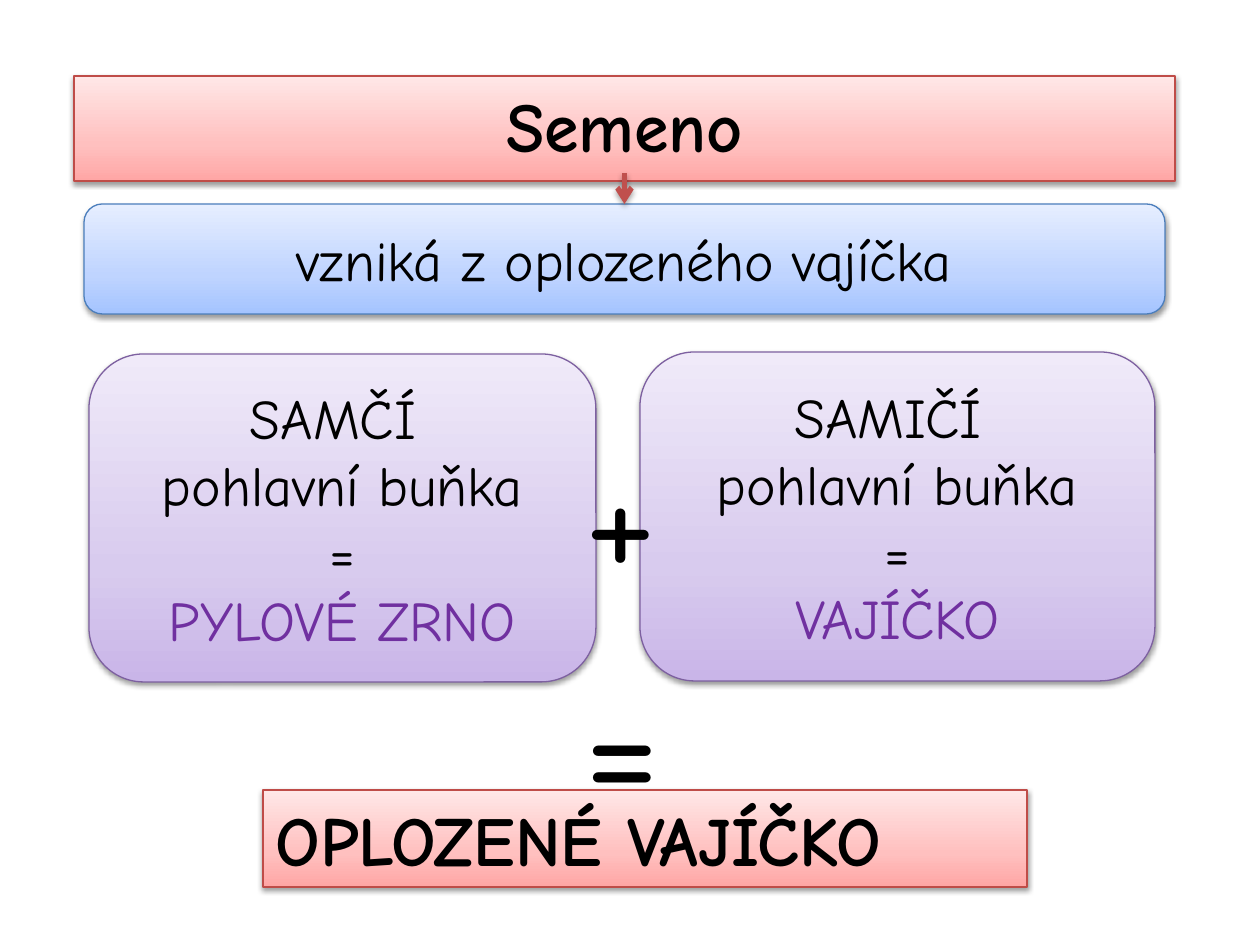
from dataclasses import dataclass

from copy import deepcopy
from lxml import etree
from pptx import Presentation
from pptx.dml.color import RGBColor
from pptx.enum.shapes import MSO_CONNECTOR, MSO_SHAPE
from pptx.enum.text import MSO_ANCHOR, MSO_AUTO_SIZE, PP_ALIGN
from pptx.oxml.ns import qn
from pptx.util import Emu, Pt

PX = 914400 // 126
RECT, ROUNDED = MSO_SHAPE.RECTANGLE, MSO_SHAPE.ROUNDED_RECTANGLE
STRAIGHT = MSO_CONNECTOR.STRAIGHT
TOP, MIDDLE = MSO_ANCHOR.TOP, MSO_ANCHOR.MIDDLE
LEFT, CENTER = PP_ALIGN.LEFT, PP_ALIGN.CENTER
GROW, FIXED = MSO_AUTO_SIZE.SHAPE_TO_FIT_TEXT, MSO_AUTO_SIZE.NONE
FONT = "Comic Neue"
BLACK, PURPLE, ARROW_RED = "000000", "7030A0", "C0504D"
STOP_POSITIONS = (0, 0.35, 1)
BOTTOM_SIDE, TOP_SIDE = 2, 0


@dataclass(frozen=True)
class Theme:
    stops: tuple[str, str, str]
    outline: str


@dataclass(frozen=True)
class Card:
    area: tuple[int, int, int, int]
    theme: Theme
    lines: tuple[str, ...]
    last_color: str = BLACK


RED = Theme(("FFA6A5", "FFC0BF", "FFE7E7"), "BF4C48")
BLUE = Theme(("A4C4FF", "BFD4FF", "E6EEFF"), "4B7EBC")
VIOLET = Theme(("C9B5E8", "D8CBEE", "F0EAF9"), "7D60A0")

TITLE_AREA = (74, 76, 1101, 97)
RESULT_AREA = (263, 790, 764, 97)
ORIGIN = Card((84, 204, 1081, 110), BLUE, ("vzniká z oplozeného vajíčka",))
CELLS = (
    Card((89, 354, 507, 328), VIOLET,
         ("SAMČÍ ", "pohlavní buňka", "=", "PYLOVÉ ZRNO"), PURPLE),
    Card((640, 352, 515, 329), VIOLET,
         ("SAMIČÍ ", "pohlavní buňka", "=", "VAJÍČKO"), PURPLE),
)
PLUS_AREA = (571, 402, 107, 217)
EQUALS_AREA = (571, 631, 112, 217)


def color(value: str) -> RGBColor:
    return RGBColor.from_string(value)


def emu(area: tuple[int, ...]) -> list[Emu]:
    return [Emu(length * PX) for length in area]


def set_format(target, values: dict) -> None:
    for name, value in values.items():
        setattr(target, name, value)


def add_shadow(shape, alpha: int, distance: int) -> None:
    properties = shape._element.spPr
    for old in properties.findall(qn("a:effectLst")):
        properties.remove(old)
    effects = etree.SubElement(properties, qn("a:effectLst"))
    shadow = etree.SubElement(effects, qn("a:outerShdw"), blurRad="40000",
                              dist=str(distance), dir="5400000", rotWithShape="0")
    tone = etree.SubElement(shadow, qn("a:srgbClr"), val=BLACK)
    etree.SubElement(tone, qn("a:alpha"), val=str(alpha * 1000))


def paint(shape, theme: Theme) -> None:
    """Give a box its three-stop gradient, thin outline and soft shadow."""
    shape.fill.gradient()
    shape.fill.gradient_angle = 90
    stop_list = shape._element.spPr.find(".//" + qn("a:gsLst"))
    stop_list.insert(1, deepcopy(stop_list[0]))
    for stop, position, tone in zip(shape.fill.gradient_stops, STOP_POSITIONS, theme.stops):
        stop.position = position
        stop.color.rgb = color(tone)
    shape.line.color.rgb = color(theme.outline)
    shape.line.width = Pt(0.75)
    add_shadow(shape, 38, 20000)


def write(shape, lines: tuple[str, ...], size: int, *, align=CENTER, anchor=MIDDLE,
          fit=FIXED, wrap: bool = True, bold: bool = False,
          last_color: str = BLACK) -> None:
    frame = shape.text_frame
    set_format(frame, {"auto_size": fit, "word_wrap": wrap, "vertical_anchor": anchor})
    for index, line in enumerate(lines):
        para = frame.add_paragraph() if index else frame.paragraphs[0]
        para.alignment = align
        span = para.add_run()
        span.text = line
        set_format(span.font, {"name": FONT, "size": Pt(size), "bold": bold})
        span.font.color.rgb = color(last_color if index == len(lines) - 1 else BLACK)


def add_title(page):
    title = page.shapes.title
    set_format(title, dict(zip(("left", "top", "width", "height"), emu(TITLE_AREA))))
    paint(title, RED)
    write(title, ("Semeno",), 40, anchor=TOP, fit=GROW, bold=True)
    return title


def add_card(page, card: Card):
    box = page.shapes.add_shape(ROUNDED, *emu(card.area))
    paint(box, card.theme)
    write(box, card.lines, 32, last_color=card.last_color)
    return box


def add_arrow(page, start, end) -> None:
    arrow = page.shapes.add_connector(STRAIGHT, 0, 0, 0, 0)
    arrow.begin_connect(start, BOTTOM_SIDE)
    arrow.end_connect(end, TOP_SIDE)
    arrow.line.color.rgb = color(ARROW_RED)
    arrow.line.width = Pt(3)
    etree.SubElement(arrow.line._get_or_add_ln(), qn("a:tailEnd"), type="arrow")
    add_shadow(arrow, 35, 23000)


def add_sign(page, area: tuple[int, int, int, int], sign: str) -> None:
    box = page.shapes.add_textbox(*emu(area))
    write(box, (sign,), 96, align=LEFT, anchor=TOP, fit=GROW, wrap=False)


def add_result(page) -> None:
    box = page.shapes.add_shape(RECT, *emu(RESULT_AREA))
    paint(box, RED)
    write(box, ("OPLOZENÉ VAJÍČKO",), 40, align=LEFT, anchor=TOP, fit=GROW,
          wrap=False, bold=True)


def main() -> None:
    deck = Presentation()
    deck.slide_width, deck.slide_height = emu((1260, 945))
    page = deck.slides.add_slide(deck.slide_layouts.get_by_name("Title Only"))
    title = add_title(page)
    origin = add_card(page, ORIGIN)
    add_arrow(page, title, origin)
    for cell in CELLS:
        add_card(page, cell)
    add_sign(page, PLUS_AREA, "+")
    add_result(page)
    add_sign(page, EQUALS_AREA, "=")
    deck.save("out.pptx")


if __name__ == "__main__":
    main()
